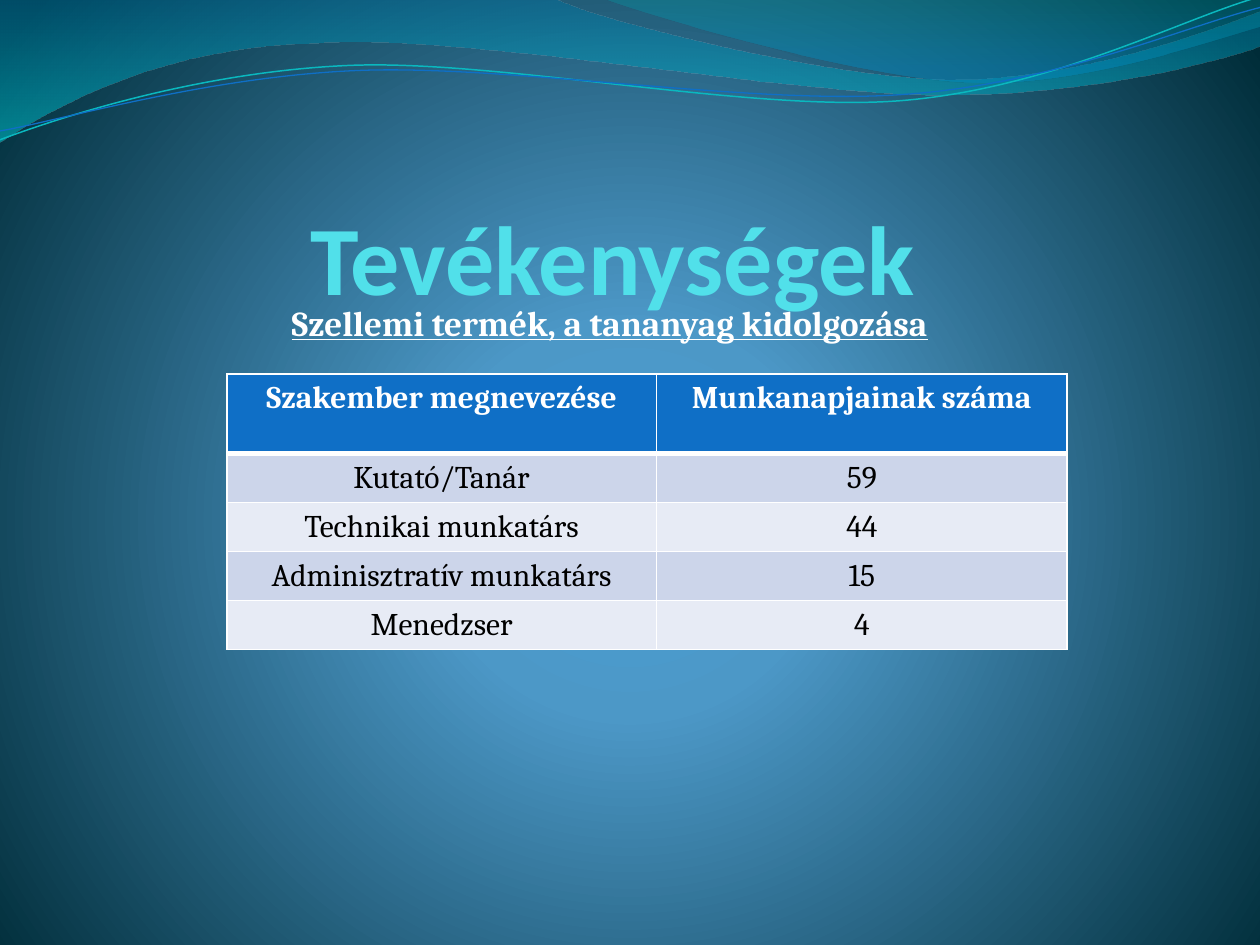
import math

from lxml import etree
from pptx import Presentation
from pptx import util as u
from pptx.dml.color import RGBColor
from pptx.enum import text
from pptx.oxml import parse_xml
from pptx.oxml.ns import nsdecls, qn

W, H = 10, 7.5
UNITS = 1000  # path units to the inch
TILT = -2.7  # degrees
COLORS = {
    "title": "51E0EA", "white": "FFFFFF", "black": "000000",
    "header": "0F6FC6", "odd_row": "CCD5EA", "even_row": "E7EBF5",
    "teal_line": "0AB8BF", "blue_line": "0F6FC6",
}
GLOW = [(0, "4AA0D6", 100), (25, "4C98C7", 100), (100, "002C38", 100)]
GLOW_SHAPE = ('<a:path path="circle">'
              '<a:fillToRect l="10000" t="110000" r="10000" b="100000"/></a:path>')
DOWNWARD = '<a:lin ang="5400000" scaled="1"/>'

# Each entry is one point, or two control points and an end point of a curve.
WAVES = [
    ([(0, 0), (4.4, -0.01), (4.76, 0.17, 6.64, 0.63, 7.58, 0.63),
      (8.53, 0.63, 9.58, 0.26, 10, 0.09), (10.01, 0.36),
      (9.83, 0.44, 8.7, 0.76, 7.46, 0.75), (6.22, 0.75, 3.82, 0.28, 2.57, 0.34),
      (1.29, 0.36, 0.46, 0.83, -0.01, 1.13)],
     [(0, "0074A1", 45), (100, "00C6CF", 55)]),
    ([(4.79, -0.01), (5.09, 0.11, 6.82, 0.62, 7.69, 0.65),
      (8.56, 0.69, 9.61, 0.32, 10, 0.21), (10, 0)],
     [(0, "00A1A9", 30), (80, "008BBF", 45)]),
]
STRANDS = [
    ([(0, 1.11), (0.48, 0.93, 1.58, 0.57, 2.77, 0.52),
      (3.95, 0.47, 5.93, 0.89, 7.13, 0.8), (8.33, 0.71, 9.38, 0.15, 9.98, -0.02)],
     "teal_line", 0.85),
    ([(0, 1.04), (0.47, 0.96, 1.64, 0.61, 2.83, 0.56),
      (4.03, 0.51, 5.97, 0.84, 7.17, 0.75), (8.36, 0.67, 9.41, 0.21, 10, 0.06)],
     "blue_line", 0.75),
]
ROWS = [
    ("Szakember megnevezése", "Munkanapjainak száma"),
    ("Kutató/Tanár", "59"),
    ("Technikai munkatárs", "44"),
    ("Adminisztratív munkatárs", "15"),
    ("Menedzser", "4"),
]


def rgb(name):
    return RGBColor.from_string(COLORS[name])


def replace_gradient(fill, parent, stops, direction):
    fill.gradient()
    gs = "".join(
        f'<a:gs pos="{pos * 1000}"><a:srgbClr val="{color}">'
        f'<a:alpha val="{alpha * 1000}"/></a:srgbClr></a:gs>'
        for pos, color, alpha in stops)
    new = parse_xml(f'<a:gradFill {nsdecls("a")} rotWithShape="1">'
                    f'<a:gsLst>{gs}</a:gsLst>{direction}</a:gradFill>')
    parent.replace(parent.find(qn("a:gradFill")), new)


def to_units(segment, angle=0, center=(0, 0)):
    """Points of a segment, turned about the center, in path units."""
    cos, sin = math.cos(math.radians(angle)), math.sin(math.radians(angle))
    cx, cy = center
    return [(round((cx + (x - cx) * cos - (y - cy) * sin) * UNITS),
             round((cy + (x - cx) * sin + (y - cy) * cos) * UNITS))
            for x, y in zip(segment[::2], segment[1::2])]


def add_outline(slide, segments, close):
    """Add a freeform whose three-point segments are Bezier curves."""
    ends = [seg[-1] for seg in segments]
    builder = slide.shapes.build_freeform(*ends[0], scale=u.Inches(1) / UNITS)
    builder.add_line_segments(ends[1:], close=close)
    sp = builder.convert_to_shape()
    sp.shadow.inherit = False
    left, top = (min(axis) for axis in zip(*ends))
    lines = list(sp._element.iter(qn("a:lnTo")))
    for line, seg in zip(lines, segments[1:]):
        if len(seg) == 3:
            curve = etree.Element(qn("a:cubicBezTo"))
            for x, y in seg:
                etree.SubElement(curve, qn("a:pt"), x=str(x - left), y=str(y - top))
            line.getparent().replace(line, curve)
    return sp


def add_wave(slide, path, stops):
    sp = add_outline(slide, [to_units(seg) for seg in path], True)
    replace_gradient(sp.fill, sp._element.spPr, stops, DOWNWARD)
    sp.line.fill.background()


def add_strand(slide, path, color, width):
    center = [(a + b) / 2 for a, b in zip(path[0], path[-1][-2:])]
    sp = add_outline(slide, [to_units(seg, -TILT, center) for seg in path], False)
    sp.rotation = TILT
    sp.fill.background()
    sp.line.color.rgb = rgb(color)
    sp.line.width = u.Pt(width)


def write(tf, words, color, **font):
    p = tf.paragraphs[0]
    p.alignment = text.PP_ALIGN.CENTER
    r = p.add_run()
    r.text = words
    r.font.color.rgb = rgb(color)
    for key, value in font.items():
        setattr(r.font, key, value)
    return p


def place(sp, top, height, anchor, inset):
    box = {"left": 0.58, "top": top, "width": 8.59, "height": height}
    for key, value in box.items():
        setattr(sp, key, u.Inches(value))
    tf = sp.text_frame
    frame = {"word_wrap": True, "auto_size": text.MSO_AUTO_SIZE.NONE,
             "vertical_anchor": anchor, "margin_left": 0,
             "margin_right": u.Inches(0.02), "margin_top": u.Inches(inset),
             "margin_bottom": u.Inches(inset)}
    for key, value in frame.items():
        setattr(tf, key, value)
    return tf


def set_borders(cell, **widths):
    """Draw white borders; widths are points by side (L, R, T, B)."""
    tcPr = cell._tc.get_or_add_tcPr()
    for i, (side, width) in enumerate(widths.items()):
        ln = etree.Element(qn(f"a:ln{side}"), w=str(u.Pt(width)))
        fill = etree.SubElement(ln, qn("a:solidFill"))
        etree.SubElement(fill, qn("a:srgbClr"), val=COLORS["white"])
        tcPr.insert(i, ln)


def add_days_table(slide):
    heights = [0.63, 0.28, 0.15, 0.28, 0.28]
    widths = [3.41, 3.26]
    box = [u.Inches(v) for v in (1.8, 2.97, sum(widths), 2.23)]
    frame = slide.shapes.add_table(len(ROWS), len(widths), *box)
    table = frame.table
    for col, width in zip(table.columns, widths):
        col.width = u.Inches(width)
    for i, (values, height) in enumerate(zip(ROWS, heights)):
        table.rows[i].height = u.Inches(height)
        head = i == 0
        shade = "header" if head else "odd_row" if i % 2 else "even_row"
        for j, value in enumerate(values):
            cell = table.cell(i, j)
            cell.fill.solid()
            cell.fill.fore_color.rgb = rgb(shade)
            write(cell.text_frame, value, "white" if head else "black",
                  name="Cambria", size=u.Pt(18), bold=head)
            set_borders(cell, L=1, R=1, T=3 if i == 1 else 1, B=3 if head else 1)
    frame.height = box[-1]


def main():
    prs = Presentation()
    prs.slide_width, prs.slide_height = u.Inches(W), u.Inches(H)
    slide = prs.slides.add_slide(prs.slide_layouts[5])
    fill = slide.background.fill
    replace_gradient(fill, slide._element.cSld.bg.bgPr, GLOW, GLOW_SHAPE)

    for wave in WAVES:
        add_wave(slide, *wave)
    for strand in STRANDS:
        add_strand(slide, *strand)

    tf = place(slide.shapes.title, 1.5, 1, text.MSO_ANCHOR.BOTTOM, 0)
    write(tf, "Tevékenységek", "title", name="Calibri", size=u.Pt(56), bold=True)

    subtitle = slide.shapes.add_textbox(0, 0, 0, 0)
    tf = place(subtitle, 2.34, 4.69, text.MSO_ANCHOR.TOP, 0.05)
    p = write(tf, "Szellemi termék, a tananyag kidolgozása", "white",
              name="Cambria", size=u.Pt(20), bold=True, underline=True)
    p.space_before = u.Pt(4)
    p._p.get_or_add_pPr().set("marR", str(u.Inches(0.05)))

    add_days_table(slide)
    prs.save("out.pptx")


if __name__ == "__main__":
    main()
